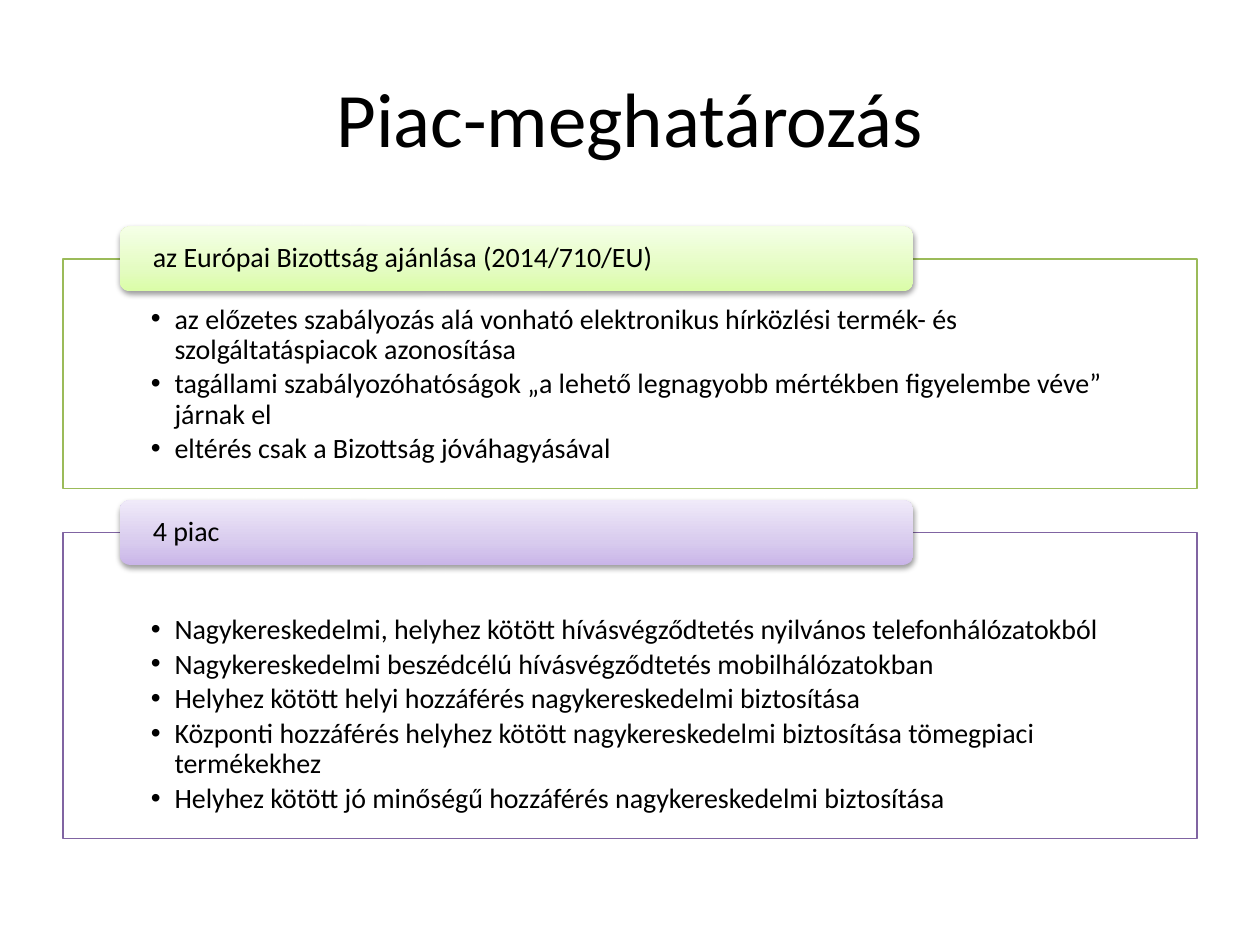
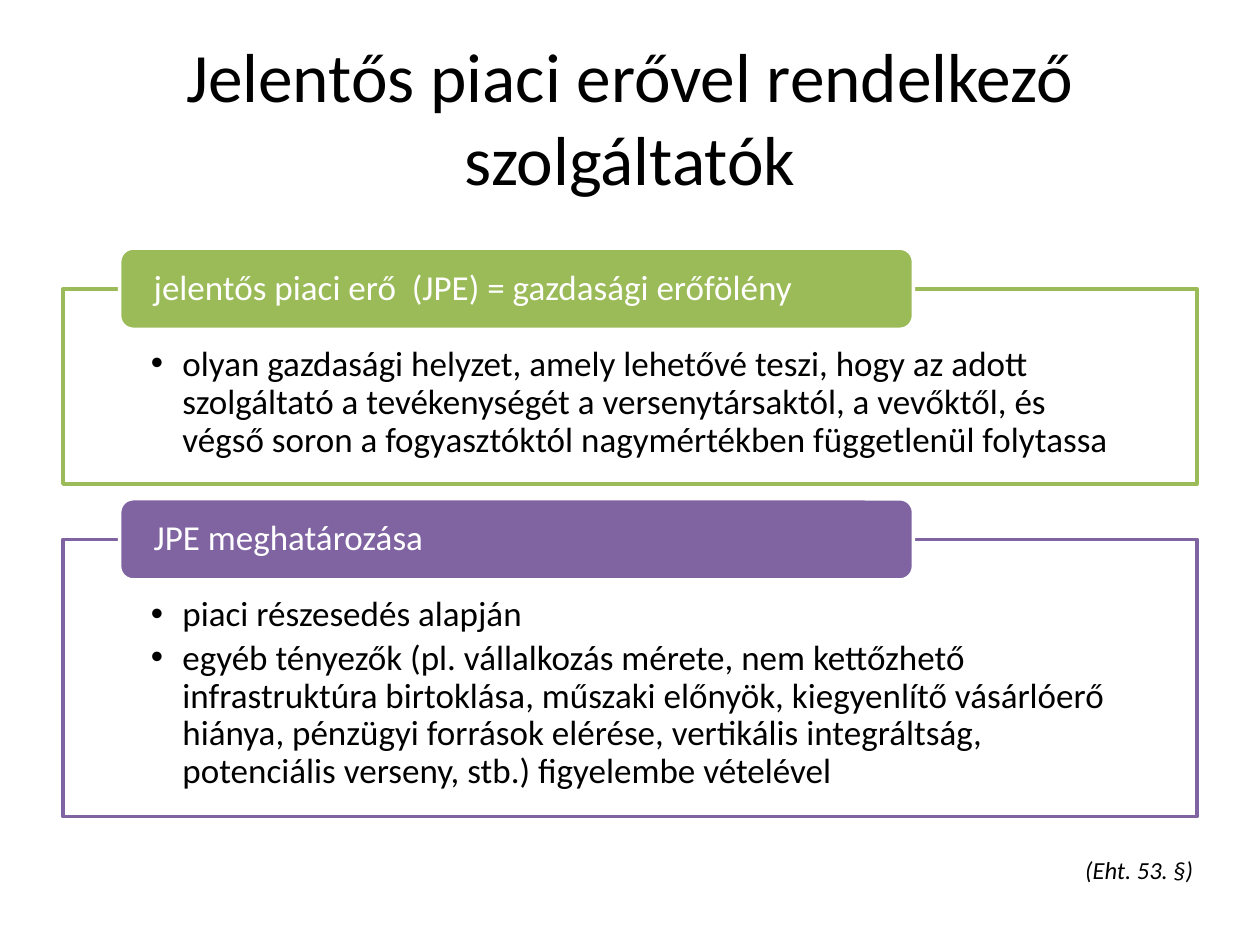
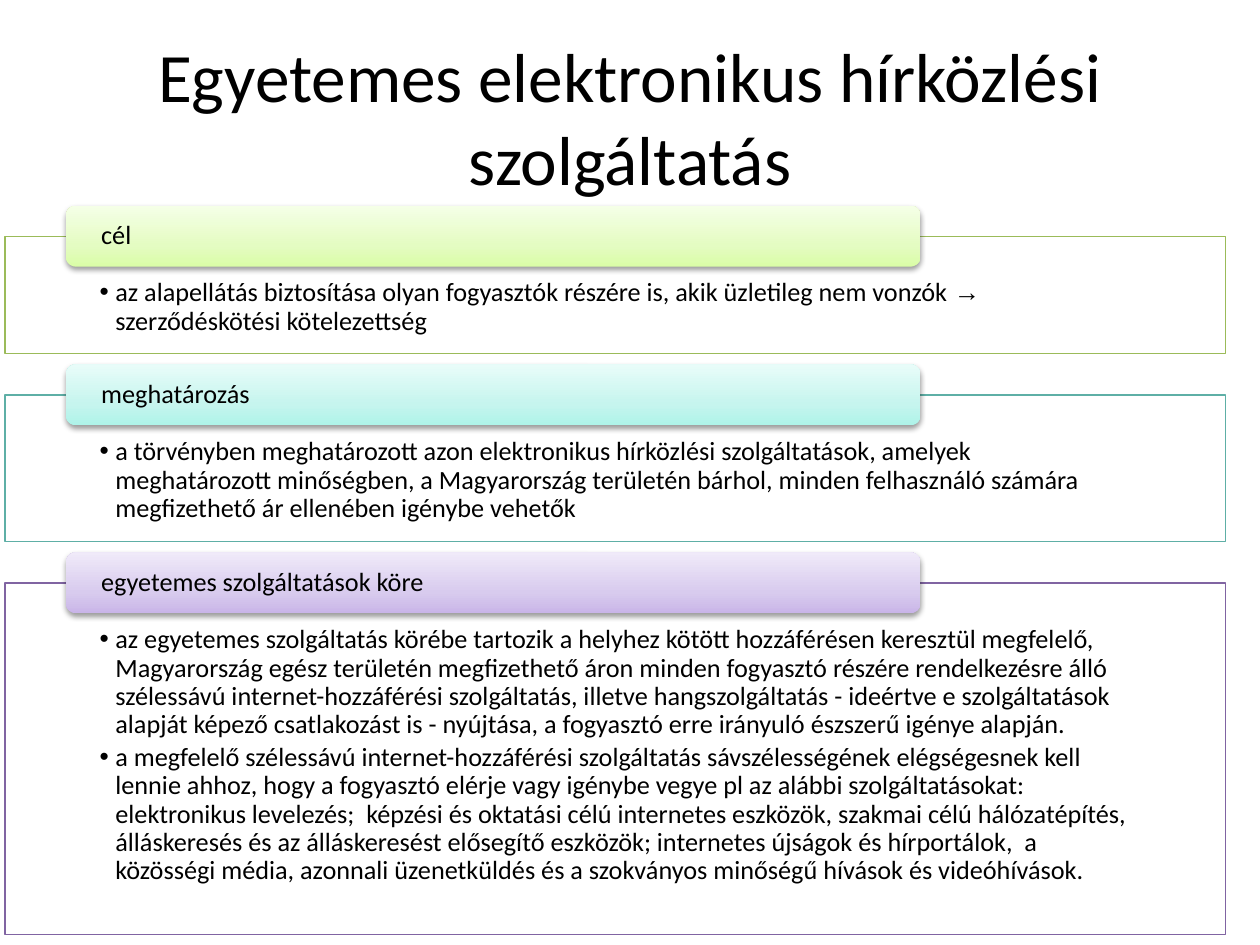
from lxml.etree import SubElement
from pptx import Presentation
from pptx.dml.color import RGBColor
from pptx.enum.shapes import MSO_SHAPE
from pptx.enum.text import MSO_ANCHOR, PP_ALIGN
from pptx.oxml.ns import qn
from pptx.util import Pt

BLACK, WHITE = "000000", "FFFFFF"
FONT, ARROW_FONT = "Calibri", "Times New Roman"

# Each accent: line colour, then gradient stops from the bottom up
ACCENTS = {
    "green": ("9BBB59", ("DAFDA7", "E4FCC2", "F5FFE7")),
    "teal": ("5EAFA6", ("AEF3E9", "C6F5EE", "E8FCF9")),
    "purple": ("8064A2", ("C9B5E8", "D8CBEE", "F0EAF9")),
}
GRADIENT_POSITIONS = (0, 35, 100)

# Each panel: accent, frame height, extra space above the bullets, heading,
# bullets (each a list of runs)
SLIDES = [
    dict(
        title="Piac-meghatározás", title_size=44, glossy=True,
        left=36, width=648, first_frame=148, size=16, hanging=13.5, line=0.75,
        panels=[
            ("green", 131, 0, "az Európai Bizottság ajánlása (2014/710/EU)", [
                ["az előzetes szabályozás alá vonható elektronikus hírközlési termék- és "
                 "szolgáltatáspiacok azonosítása"],
                ["tagállami szabályozóhatóságok „a lehető legnagyobb mértékben figyelembe "
                 "véve” járnak el"],
                ["eltérés csak a Bizottság jóváhagyásával"],
            ]),
            ("purple", 174.7, 21, "4 piac", [
                ["Nagykereskedelmi, helyhez kötött hívásvégződtetés nyilvános "
                 "telefonhálózatokból"],
                ["Nagykereskedelmi beszédcélú hívásvégződtetés mobilhálózatokban"],
                ["Helyhez kötött helyi hozzáférés nagykereskedelmi biztosítása"],
                ["Központi hozzáférés helyhez kötött nagykereskedelmi biztosítása "
                 "tömegpiaci termékekhez"],
                ["Helyhez kötött jó minőségű hozzáférés nagykereskedelmi biztosítása"],
            ]),
        ],
    ),
    dict(
        title="Jelentős piaci erővel rendelkező szolgáltatók", title_size=39.6, glossy=False,
        left=36, width=648, first_frame=165, size=20, hanging=18, line=2,
        note="(Eht. 53. §)",
        panels=[
            ("green", 111.6, 0, "jelentős piaci erő  (JPE) = gazdasági erőfölény", [
                ["olyan gazdasági helyzet, amely lehetővé teszi, hogy az adott szolgáltató a "
                 "tevékenységét a versenytársaktól, a vevőktől, és végső soron a "
                 "fogyasztóktól nagymértékben függetlenül folytassa"],
            ]),
            ("purple", 158.5, 0, "JPE meghatározása", [
                ["piaci részesedés alapján"],
                ["egyéb tényezők (pl. vállalkozás mérete, nem kettőzhető infrastruktúra "
                 "birtoklása, műszaki előnyök, kiegyenlítő vásárlóerő hiánya, pénzügyi "
                 "források elérése, vertikális integráltság, potenciális verseny, stb.) "
                 "figyelembe vételével"],
            ]),
        ],
    ),
    dict(
        title="Egyetemes elektronikus hírközlési szolgáltatás", title_size=39.6, glossy=True,
        left=2.8, width=697.6, first_frame=135, size=15, hanging=9, line=0.75,
        panels=[
            ("green", 67, 0, "cél", [
                ["az alapellátás biztosítása olyan fogyasztók részére is, akik üzletileg nem "
                 "vonzók ", "→ ", "szerződéskötési kötelezettség"],
            ]),
            ("teal", 83.7, 0, "meghatározás", [
                ["a törvényben meghatározott azon elektronikus hírközlési szolgáltatások, "
                 "amelyek meghatározott minőségben, a Magyarország területén bárhol, minden "
                 "felhasználó számára megfizethető ár ellenében igénybe vehetők"],
            ]),
            ("purple", 201, 0, "egyetemes szolgáltatások köre", [
                ["az egyetemes szolgáltatás körébe tartozik a helyhez kötött hozzáférésen "
                 "keresztül megfelelő, Magyarország egész területén megfizethető áron minden "
                 "fogyasztó részére rendelkezésre álló szélessávú internet-hozzáférési "
                 "szolgáltatás, illetve hangszolgáltatás - ideértve e szolgáltatások alapját "
                 "képező csatlakozást is - nyújtása, a fogyasztó erre irányuló észszerű "
                 "igénye alapján."],
                ["a megfelelő szélessávú internet-hozzáférési szolgáltatás "
                 "sávszélességének elégségesnek kell lennie ahhoz, hogy a fogyasztó elérje "
                 "vagy igénybe vegye pl az alábbi szolgáltatásokat: elektronikus levelezés;  "
                 "képzési és oktatási célú internetes eszközök, szakmai célú hálózatépítés, "
                 "álláskeresés és az álláskeresést elősegítő eszközök; internetes újságok és "
                 "hírportálok,  a közösségi média, azonnali üzenetküldés és a szokványos "
                 "minőségű hívások és videóhívások."],
            ]),
        ],
    ),
]


def rgb(code):
    return RGBColor.from_string(code)


def set_frame(shape, anchor, insets):
    """Wrap the text and set its insets (left, top, right, bottom)."""
    frame = shape.text_frame
    frame.word_wrap = True
    frame.vertical_anchor = anchor
    frame.margin_left, frame.margin_top, frame.margin_right, frame.margin_bottom = map(Pt, insets)
    return frame


def write(para, runs, size, color=BLACK, align=PP_ALIGN.LEFT, italic=False):
    para.alignment = align
    for text in runs:
        span = para.add_run()
        span.text = text
        span.font.name = ARROW_FONT if text.startswith("→") else FONT
        span.font.size = Pt(size)
        span.font.color.rgb = rgb(color)
        span.font.italic = italic


def add_label(page, place, text, size, anchor, align, italic=False):
    box = page.shapes.add_textbox(*map(Pt, place))
    frame = set_frame(box, anchor, (7.2, 3.6, 7.2, 3.6))
    write(frame.paragraphs[0], [text], size, align=align, italic=italic)


def make_bullet(para, hanging):
    properties = para._p.get_or_add_pPr()
    properties.set("marL", str(Pt(hanging)))
    properties.set("indent", str(-Pt(hanging)))
    SubElement(properties, qn("a:buFont"), typeface="Arial")
    SubElement(properties, qn("a:buChar"), char="•")


def add_block(page, kind, place):
    block = page.shapes.add_shape(kind, *map(Pt, place))
    block.shadow.inherit = False
    return block


def fill_glossy(shape, colors):
    """Vertical three-stop gradient with a soft shadow below."""
    shape.line.fill.background()
    shape.fill.gradient()
    shape.fill.gradient_angle = 90
    properties = shape._element.spPr
    stops = properties.find(qn("a:gradFill")).find(qn("a:gsLst"))
    stops.clear()
    for position, color in zip(GRADIENT_POSITIONS, colors):
        stop = SubElement(stops, qn("a:gs"), pos=str(position * 1000))
        SubElement(stop, qn("a:srgbClr"), val=color)
    shadow = SubElement(properties.find(qn("a:effectLst")), qn("a:outerShdw"),
                        blurRad=str(Pt(3.1)), dist=str(Pt(1.6)), dir="5400000", rotWithShape="0")
    SubElement(SubElement(shadow, qn("a:srgbClr"), val=BLACK), qn("a:alpha"), val="38000")


def add_panel(page, content, top, panel):
    """Framed bullets with a heading tab centred on the frame's top edge."""
    accent, height, lead, heading, bullets = panel
    line_color, gradient = ACCENTS[accent]
    left, width, size = content["left"], content["width"], content["size"]

    body = add_block(page, MSO_SHAPE.RECTANGLE, (left, top, width, height))
    body.fill.solid()
    body.fill.fore_color.rgb = rgb(WHITE)
    body.line.color.rgb = rgb(line_color)
    body.line.width = Pt(content["line"])
    side = width * 0.0776
    frame = set_frame(body, MSO_ANCHOR.TOP, (side, size * 1.64 + lead, side, size * 0.56))
    for index, runs in enumerate(bullets):
        para = frame.add_paragraph() if index else frame.paragraphs[0]
        para.line_spacing = 0.9
        para.space_after = Pt(size * 0.16)
        make_bullet(para, content["hanging"])
        write(para, runs, size)

    tab_height = size * 2.32
    tab = add_block(page, MSO_SHAPE.ROUNDED_RECTANGLE,
                    (left + width * 0.05, top - tab_height / 2, width * 0.7, tab_height))
    if content["glossy"]:
        fill_glossy(tab, gradient)
    else:
        tab.fill.solid()
        tab.fill.fore_color.rgb = rgb(line_color)
        tab.line.color.rgb = rgb(WHITE)
        tab.line.width = Pt(content["line"])
    side = width * 0.0265
    para = set_frame(tab, MSO_ANCHOR.MIDDLE, (side, 0, side, 0)).paragraphs[0]
    para.line_spacing = 0.9
    write(para, [heading], size, BLACK if content["glossy"] else WHITE)


def build_slide(deck, content):
    page = deck.slides.add_slide(deck.slide_layouts[6])
    add_label(page, (36, 21.6, 648, 90), content["title"], content["title_size"],
              MSO_ANCHOR.MIDDLE, PP_ALIGN.CENTER)
    top = content["first_frame"]
    for panel in content["panels"]:
        add_panel(page, content, top, panel)
        top += panel[1] + content["size"] * 1.58
    if "note" in content:
        add_label(page, (586.8, 485.3, 102.2, 46), content["note"], 14,
                  MSO_ANCHOR.TOP, PP_ALIGN.RIGHT, italic=True)


def main():
    deck = Presentation()
    deck.slide_width, deck.slide_height = Pt(720), Pt(540)
    for content in SLIDES:
        build_slide(deck, content)
    deck.save("out.pptx")


if __name__ == "__main__":
    main()
